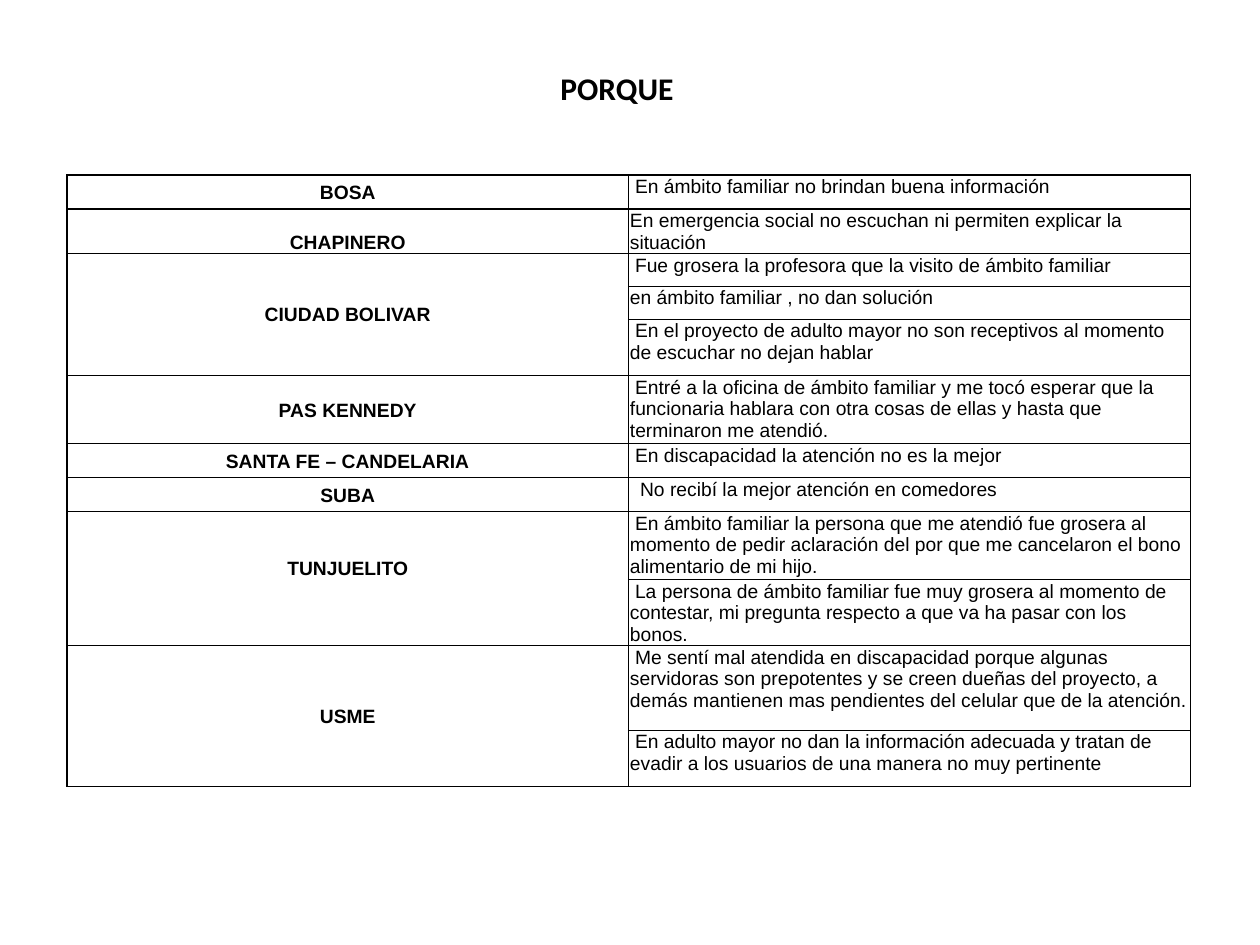
from dataclasses import dataclass

from lxml import etree
from pptx import Presentation
from pptx.dml.color import RGBColor
from pptx.enum.text import MSO_ANCHOR, PP_ALIGN
from pptx.oxml.ns import qn
from pptx.util import Inches, Pt

LEFT, CENTER = PP_ALIGN.LEFT, PP_ALIGN.CENTER
TOP, MIDDLE, BOTTOM = MSO_ANCHOR.TOP, MSO_ANCHOR.MIDDLE, MSO_ANCHOR.BOTTOM


@dataclass(frozen=True)
class Theme:
    ink: str = "000000"
    title_font: str = "Calibri"
    body_font: str = "Arial"
    title_size: int = 18
    body_size: int = 11
    body_leading: float = 12.3
    outer_line: float = 1
    inner_line: float = 0.5
    inset: float = 0.01
    indent: float = 0.04


THEME = Theme()
SLIDE_W, SLIDE_H = 10, 7.5
TABLE_LEFT, TABLE_TOP, COL_W = 0.53, 1.39, 4.46

# Locality, anchor, merged, then its reasons: row height, indent steps, text
LOCALITIES = [
    ("BOSA", MIDDLE, False, [
        (0.27, 1, "En ámbito familiar no brindan buena información")]),
    ("CHAPINERO", BOTTOM, False, [
        (0.27, 0, "En emergencia social no escuchan ni permiten explicar la situación")]),
    ("CIUDAD BOLIVAR", MIDDLE, True, [
        (0.26, 1, "Fue grosera la profesora que la visito de ámbito familiar"),
        (0.26, 0, "en ámbito familiar , no dan solución"),
        (0.45, 1, "En el proyecto de adulto mayor no son receptivos al momento "
                  "de escuchar no dejan hablar")]),
    ("PAS KENNEDY", MIDDLE, False, [
        (0.54, 1, "Entré a la oficina de ámbito familiar y me tocó esperar que la "
                  "funcionaria hablara con otra cosas de ellas y hasta que "
                  "terminaron me atendió.")]),
    ("SANTA FE – CANDELARIA", MIDDLE, False, [
        (0.27, 1, "En discapacidad la atención no es la mejor")]),
    ("SUBA", MIDDLE, False, [
        (0.27, 2, "No recibí la mejor atención en comedores")]),
    ("TUNJUELITO", BOTTOM, False, [
        (0.54, 1, "En ámbito familiar la persona que me atendió fue grosera al "
                  "momento de pedir aclaración del por que me cancelaron el bono "
                  "alimentario de mi hijo."),
        (0.50, 1, "La persona de ámbito familiar fue muy grosera al momento de "
                  "contestar, mi pregunta respecto a que va ha pasar con los bonos.")]),
    ("USME", MIDDLE, True, [
        (0.67, 1, "Me sentí mal atendida en discapacidad porque algunas "
                  "servidoras son prepotentes y se creen dueñas del proyecto, a "
                  "demás mantienen mas pendientes del celular que de la atención."),
        (0.45, 1, "En adulto mayor no dan la información adecuada y tratan de "
                  "evadir a los usuarios de una manera no muy pertinente")]),
]


def style_run(r, font, size, bold):
    r.font.name, r.font.size, r.font.bold = font, Pt(size), bold
    r.font.color.rgb = RGBColor.from_string(THEME.ink)


def add_title(slide, text):
    box = slide.shapes.add_textbox(
        Inches(4.35), Inches(0.4), Inches(4.97), Inches(0.64))
    tf = box.text_frame
    tf.word_wrap = True
    tf.vertical_anchor = MIDDLE
    tf.text = text
    p = tf.paragraphs[0]
    p.line_spacing = 0.9
    style_run(p.runs[0], THEME.title_font, THEME.title_size, True)


def set_borders(cell, top, bottom):
    """Draw the four sides; a width of 0 means no line."""
    tcPr = cell._tc.get_or_add_tcPr()
    sides = {"L": THEME.outer_line, "R": THEME.outer_line, "T": top, "B": bottom}
    for side, width in sides.items():
        ln = etree.SubElement(tcPr, qn(f"a:ln{side}"), w=str(Pt(width)))
        if width:
            fill = etree.SubElement(ln, qn("a:solidFill"))
            etree.SubElement(fill, qn("a:srgbClr"), val=THEME.ink)
        else:
            etree.SubElement(ln, qn("a:noFill"))


def style_cell(cell, top, bottom):
    set_borders(cell, top, bottom)
    cell.fill.background()
    cell.margin_left = cell.margin_right = cell.margin_top = Inches(THEME.inset)
    cell.margin_bottom = 0


def write_cell(cell, text, align, anchor, bold=False, indent=0):
    cell.vertical_anchor = anchor
    cell.text_frame.text = text
    p = cell.text_frame.paragraphs[0]
    p.alignment = align
    p.line_spacing = Pt(THEME.body_leading)
    if indent:
        p._p.get_or_add_pPr().set("indent", str(Inches(indent * THEME.indent)))
    style_run(p.runs[0], THEME.body_font, THEME.body_size, bold)


def fill_locality(table, first, name, anchor, merged, reasons):
    last = first + len(reasons) - 1
    # A merged name cell is framed on every side; a split one is open inside
    name_inner = THEME.outer_line if merged else 0
    for row, (height, indent, text) in enumerate(reasons, first):
        table.rows[row].height = Inches(height)
        for col, inner in enumerate((name_inner, THEME.inner_line)):
            style_cell(table.cell(row, col),
                       THEME.outer_line if row == first else inner,
                       THEME.outer_line if row == last else inner)
        write_cell(table.cell(row, 1), text, LEFT, TOP, indent=indent)
    if merged:
        table.cell(first, 0).merge(table.cell(last, 0))
    write_cell(table.cell(first, 0), name, CENTER, anchor, bold=True)
    return last + 1


def add_reasons_table(slide):
    heights = [reason[0] for *_, reasons in LOCALITIES for reason in reasons]
    table = slide.shapes.add_table(
        len(heights), 2, Inches(TABLE_LEFT), Inches(TABLE_TOP),
        Inches(2 * COL_W), Inches(sum(heights))).table
    table.first_row = table.horz_banding = False
    for column in table.columns:
        column.width = Inches(COL_W)
    row = 0
    for locality in LOCALITIES:
        row = fill_locality(table, row, *locality)


def main():
    prs = Presentation()
    prs.slide_width, prs.slide_height = Inches(SLIDE_W), Inches(SLIDE_H)
    slide = prs.slides.add_slide(prs.slide_layouts[6])
    add_title(slide, "PORQUE")
    add_reasons_table(slide)
    prs.save("out.pptx")


if __name__ == "__main__":
    main()
